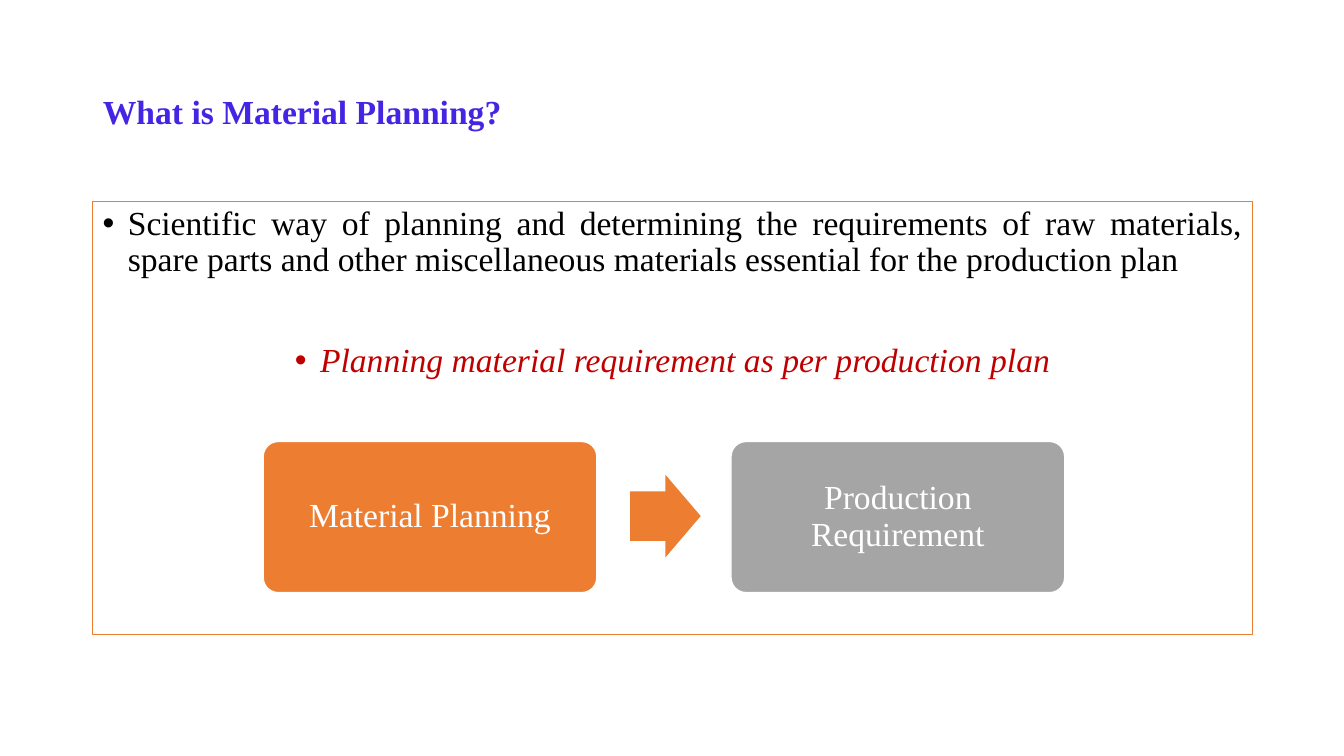
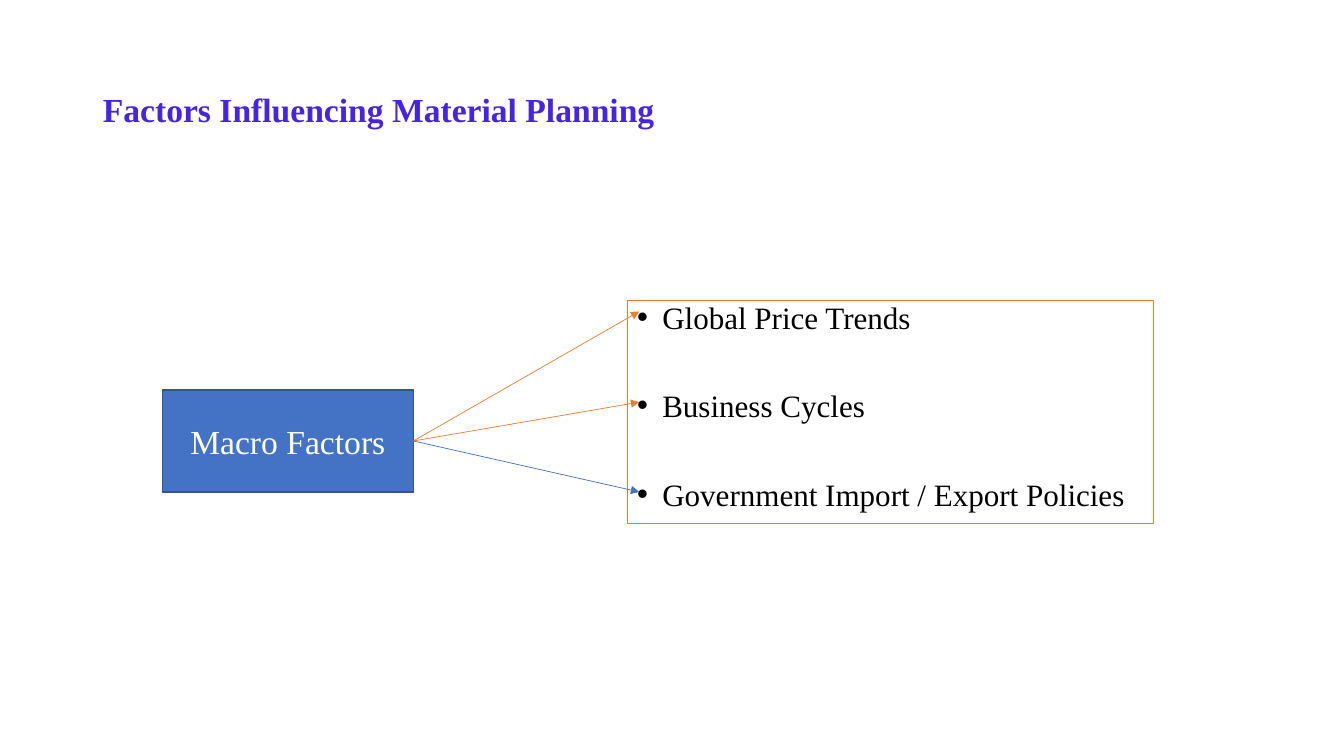
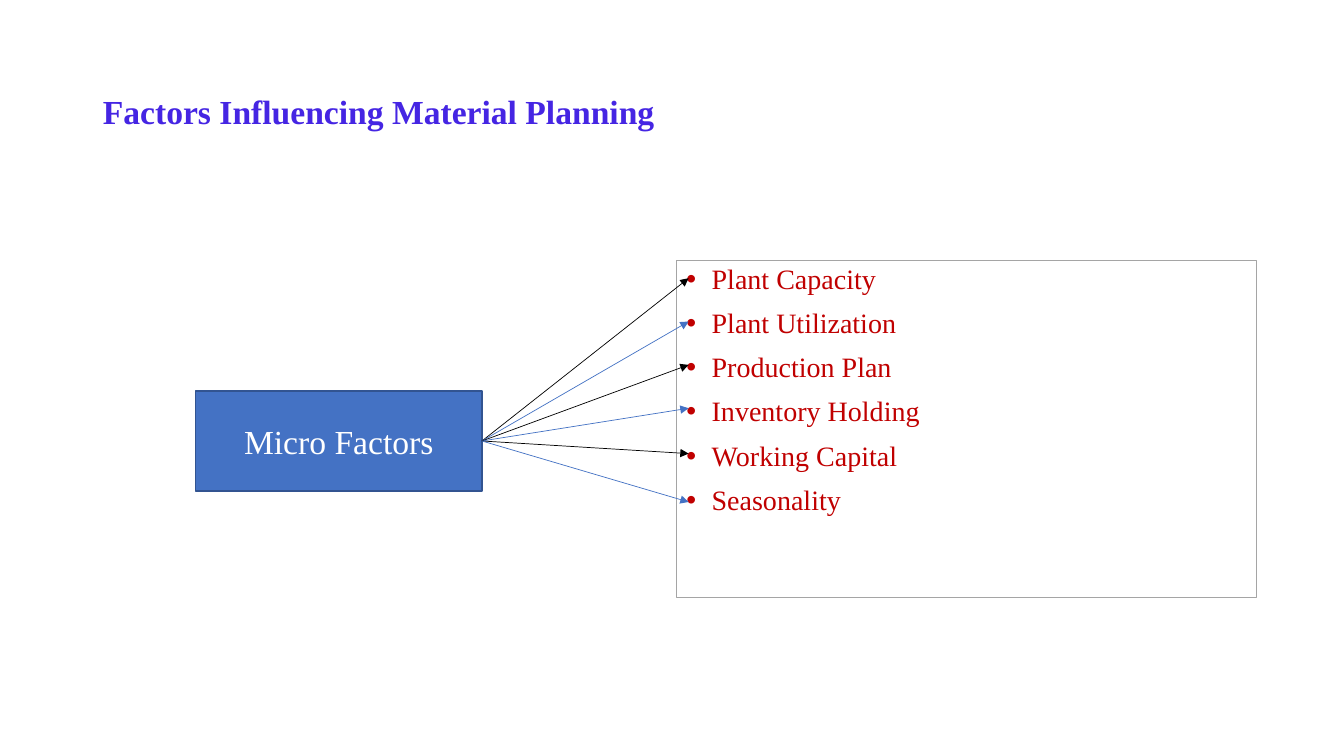
import pptx
import pptx.dml.color
import pptx.enum.shapes
import pptx.enum.text
import pptx.oxml.ns
import pptx.util
from lxml import etree

Inches = pptx.util.Inches
Pt = pptx.util.Pt
SHAPE = pptx.enum.shapes.MSO_SHAPE
ALIGN = pptx.enum.text.PP_ALIGN
ANCHOR = pptx.enum.text.MSO_ANCHOR
qn = pptx.oxml.ns.qn

FONT = "Times New Roman"
COLORS = {
    name: pptx.dml.color.RGBColor.from_string(value)
    for name, value in {
        "title": "4525E3", "orange": "ED7D31", "gray": "A5A5A5", "blue": "4472C4",
        "navy": "325491", "red": "C00000", "black": "000000", "white": "FFFFFF",
    }.items()
}


def add_box(slide, kind, box, fill=None, line=None, width=1.0, anchor=ANCHOR.MIDDLE):
    shape = slide.shapes.add_shape(kind, *[Inches(value) for value in box])
    shape.shadow.inherit = False
    if fill:
        shape.fill.solid()
        shape.fill.fore_color.rgb = COLORS[fill]
    else:
        shape.fill.background()
    if line:
        shape.line.color.rgb = COLORS[line]
        shape.line.width = Pt(width)
    else:
        shape.line.fill.background()
    shape.text_frame.word_wrap = True
    shape.text_frame.vertical_anchor = anchor
    return shape


def write_paragraph(frame, text, color, size=24, align=ALIGN.CENTER, spacing=1.0,
                    before=0, bullet=False, bold=False, italic=False):
    paragraph = frame.add_paragraph() if frame.text else frame.paragraphs[0]
    paragraph.alignment = align
    paragraph.line_spacing = spacing
    paragraph.space_before = Pt(before)
    if bullet:
        properties = paragraph._p.get_or_add_pPr()
        properties.set("marL", str(Inches(0.25)))
        properties.set("indent", str(-Inches(0.25)))
        etree.SubElement(properties, qn("a:buFont")).set("typeface", "Arial")
        etree.SubElement(properties, qn("a:buChar")).set("char", "•")
    run = paragraph.add_run()
    run.text = text
    run.font.name = FONT
    run.font.size = Pt(size)
    run.font.bold = bold
    run.font.italic = italic
    run.font.color.rgb = COLORS[color]


presentation = pptx.Presentation()
presentation.slide_width = Inches(13.33)
presentation.slide_height = Inches(7.5)

# Slides and their titles
slides = []
for text, width, height in [
    ("What is Material Planning?", 11.5, 1.45),
    ("Factors Influencing Material Planning", 5.89, 1.41),
    ("Factors Influencing Material Planning", 11.5, 1.45),
]:
    slide = presentation.slides.add_slide(presentation.slide_layouts[5])
    title = slide.shapes.title
    title.left, title.top = Inches(0.92), Inches(0.4)
    title.width, title.height = Inches(width), Inches(height)
    title.text_frame.vertical_anchor = ANCHOR.MIDDLE
    write_paragraph(title.text_frame, text, "title", align=ALIGN.LEFT, spacing=0.9, bold=True)
    slides.append(slide)

# Slide 1: definition
definition = add_box(slides[0], SHAPE.RECTANGLE, (0.92, 2, 11.5, 4.3),
                     line="orange", width=0.75, anchor=ANCHOR.TOP)
write_paragraph(
    definition.text_frame,
    "Scientific way of planning and determining the requirements of raw materials, "
    "spare parts and other miscellaneous materials essential for the production plan",
    "black", align=ALIGN.JUSTIFY, spacing=0.9, before=10, bullet=True)
write_paragraph(definition.text_frame, "Planning material requirement as per production plan",
                "red", spacing=0.9, before=46, bullet=True, italic=True)

# Slide 1: process from planning to requirement
for text, left, fill in [("Material Planning", 2.61, "orange"),
                         ("Production Requirement", 7.25, "gray")]:
    step = add_box(slides[0], SHAPE.ROUNDED_RECTANGLE, (left, 4.38, 3.31, 1.5), fill, "white")
    step.adjustments[0] = 0.1
    write_paragraph(step.text_frame, text, "white", spacing=0.9)
arrow = add_box(slides[0], SHAPE.RIGHT_ARROW, (6.25, 4.71, 0.7, 0.82), "orange")
arrow.adjustments[0] = 0.6

# Slides 2 and 3: a group of factors, with an arrow to each one
factor_slides = [
    {
        "name": "Macro Factors", "name_box": (1.61, 3.87, 2.49, 1.01),
        "list_box": (6.22, 2.98, 5.22, 2.21), "border": "orange",
        "color": "black", "size": 22.2, "spacing": 0.8, "gap": 42,
        "factors": [
            ("Global Price Trends", 3.09, "orange"),
            ("Business Cycles", 3.99, "orange"),
            ("Government Import / Export Policies", 4.88, "blue"),
        ],
    },
    {
        "name": "Micro Factors", "name_box": (1.94, 3.88, 2.84, 0.99),
        "list_box": (6.71, 2.58, 5.75, 3.35), "border": "gray",
        "color": "red", "size": 20, "spacing": 0.9, "gap": 10,
        "factors": [
            ("Plant Capacity", 2.76, "black"),
            ("Plant Utilization", 3.19, "blue"),
            ("Production Plan", 3.62, "black"),
            ("Inventory Holding", 4.05, "blue"),
            ("Working Capital", 4.5, "black"),
            ("Seasonality", 4.98, "blue"),
        ],
    },
]
for slide, group in zip(slides[1:], factor_slides):
    factor_list = add_box(slide, SHAPE.RECTANGLE, group["list_box"], line=group["border"],
                          width=0.75, anchor=ANCHOR.TOP)
    name_box = add_box(slide, SHAPE.RECTANGLE, group["name_box"], "blue", "navy")
    write_paragraph(name_box.text_frame, group["name"], "white")

    for index, (factor, arrow_y, arrow_color) in enumerate(group["factors"]):
        write_paragraph(factor_list.text_frame, factor, group["color"], group["size"],
                        ALIGN.LEFT, group["spacing"], group["gap"] if index else 10, bullet=True)
        connector = slide.shapes.add_connector(
            pptx.enum.shapes.MSO_CONNECTOR.STRAIGHT, 0, 0,
            factor_list.left + Inches(0.12), Inches(arrow_y))
        connector.begin_connect(name_box, 3)
        connector.line.color.rgb = COLORS[arrow_color]
        connector.line.width = Pt(0.5)
        properties = connector.element.spPr
        etree.SubElement(properties.find(qn("a:ln")), qn("a:tailEnd")).set("type", "triangle")
        etree.SubElement(properties, qn("a:effectLst"))

presentation.save("out.pptx")
